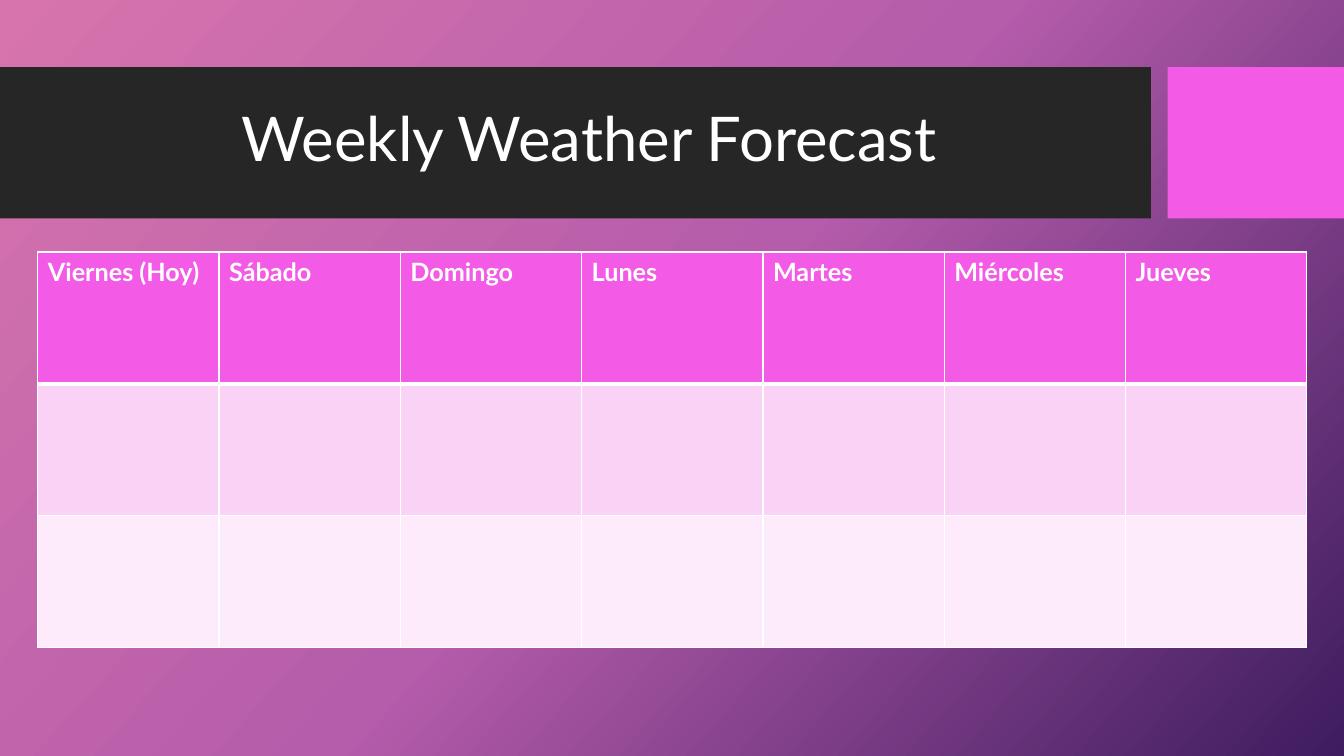
from copy import deepcopy

from lxml.etree import SubElement
from pptx import Presentation
from pptx.dml.color import RGBColor
from pptx.enum.shapes import MSO_SHAPE
from pptx.enum.text import MSO_ANCHOR, MSO_AUTO_SIZE, PP_ALIGN
from pptx.oxml.ns import qn
from pptx.util import Inches, Pt


def rgb(value):
    """Turn a hex string into a colour."""
    return RGBColor.from_string(value)


def write(tf, text, size=18, color="FFFFFF", bold=False, align=PP_ALIGN.LEFT, spacing=None):
    """Write one formatted paragraph into a text frame."""
    p = tf.paragraphs[0]
    p.alignment = align
    p.line_spacing = spacing
    r = p.add_run()
    r.text = text
    r.font.name = "Lato"
    r.font.size = Pt(size)
    r.font.bold = bold
    r.font.color.rgb = rgb(color)


class Deck:
    """Hold the style and current slide, laid out on a 160 by 90 grid."""

    PINK, DARK, WHITE = "F35AE6", "262626", "FFFFFF"
    BANDS = (PINK, "FAD2F5", "FDEAFA")

    def __init__(self):
        """Open a widescreen deck with one title slide."""
        self.prs = Presentation()
        self.prs.slide_width, self.prs.slide_height = Inches(13.33), Inches(7.5)
        self.s = self.prs.slides.add_slide(self.prs.slide_layouts[5])

    def box(self, col, row, cols, rows):
        """Convert grid units to left, top, width and height."""
        dx, dy = self.prs.slide_width / 160, self.prs.slide_height / 90
        return [round(n) for n in (col * dx, row * dy, cols * dx, rows * dy)]

    def background(self, colors, angle):
        """Fill the background with evenly spaced gradient stops."""
        fill = self.s.background.fill
        fill.gradient()
        fill.gradient_angle = 360 - angle
        stops = self.s.element.find(".//" + qn("a:gsLst"))
        for _ in colors[len(stops):]:
            stops.append(deepcopy(stops[0]))
        for i, (stop, color) in enumerate(zip(fill.gradient_stops, colors)):
            stop.color.rgb = rgb(color)
            stop.position = i / (len(colors) - 1)

    def bar(self, color, *grid):
        """Add a plain rectangle."""
        sp = self.s.shapes.add_shape(MSO_SHAPE.RECTANGLE, *self.box(*grid))
        sp.shadow.inherit = False
        sp.fill.solid()
        sp.fill.fore_color.rgb = rgb(color)
        sp.line.fill.background()

    def title(self, text, *grid):
        """Place the title placeholder in front of the bars."""
        sp = self.s.shapes.title
        self.s.shapes.element.append(sp.element)
        sp.left, sp.top, sp.width, sp.height = self.box(*grid)
        tf = sp.text_frame
        tf.word_wrap = True
        tf.auto_size = MSO_AUTO_SIZE.NONE
        tf.vertical_anchor = MSO_ANCHOR.MIDDLE
        tf.margin_right = Inches(0.4)
        write(tf, text, size=44, align=PP_ALIGN.CENTER, spacing=0.9)

    def borders(self, cell, **widths):
        """Draw white cell borders of the given point widths."""
        tc_pr = cell._tc.get_or_add_tcPr()
        for side, width in widths.items():
            ln = SubElement(tc_pr, qn(f"a:ln{side}"), w=str(Pt(width)))
            fill = SubElement(ln, qn("a:solidFill"))
            SubElement(fill, qn("a:srgbClr"), val=self.WHITE)

    def table(self, heads, *grid):
        """Add a table with a header row and empty banded rows."""
        left, top, width, height = self.box(*grid)
        rows = len(self.BANDS)
        tbl = self.s.shapes.add_table(rows, len(heads), left, top, width, height).table
        for column in tbl.columns:
            column.width = round(width / len(heads))
        for i, color in enumerate(self.BANDS):
            tbl.rows[i].height = round(height / rows)
            for j, head in enumerate(heads):
                cell = tbl.cell(i, j)
                self.borders(cell, L=1, R=1, T=3 if i == 1 else 1, B=3 if i == 0 else 1)
                cell.fill.solid()
                cell.fill.fore_color.rgb = rgb(color)
                if i == 0:
                    write(cell.text_frame, head, bold=True)


def main():
    """Build the weekly forecast slide."""
    deck = Deck()
    deck.background(["D774AD", "B55CAB", "3E1C5F"], 42)
    deck.bar(deck.DARK, 0, 8, 137, 18)
    deck.bar(deck.PINK, 139, 8, 21, 18)
    deck.title("Weekly Weather Forecast", 8.9, 9.8, 126.1, 14.2)
    days = ["Viernes (Hoy)", "Sábado", "Domingo", "Lunes", "Martes", "Miércoles", "Jueves"]
    deck.table(days, 4.5, 30, 151.1, 47.1)
    deck.prs.save("out.pptx")


if __name__ == "__main__":
    main()
